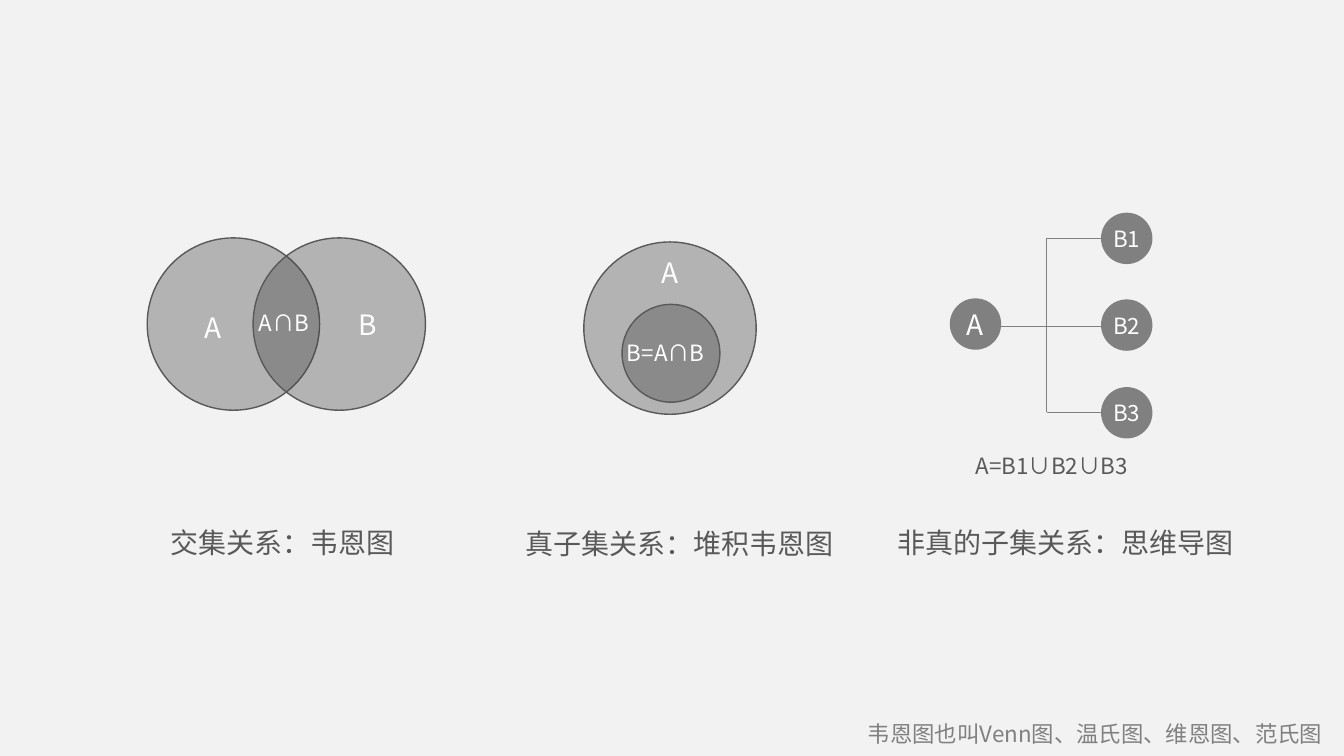
from dataclasses import dataclass

from lxml.etree import SubElement
from pptx import Presentation
from pptx.dml.color import RGBColor
from pptx.enum.shapes import MSO_CONNECTOR, MSO_SHAPE
from pptx.enum.text import MSO_ANCHOR, MSO_AUTO_SIZE, PP_ALIGN
from pptx.oxml.ns import qn
from pptx.shapes.autoshape import Shape
from pptx.slide import Slide
from pptx.text.text import TextFrame
from pptx.util import Emu, Pt

EMU_PER_PX = 9144
FONT = "Noto Sans CJK SC"
COLORS = {
    "background": "F2F2F2",
    "set": "404040",
    "outline": "595959",
    "node": "808080",
    "white": "FFFFFF",
}
SET_OPACITY = 35
NODE_SIZE = 51
BRANCH_LEFT = 1092
TRUNK_X = 1038
CAPTION_HEIGHT = 44
LABEL_HEIGHT = 37


@dataclass(frozen=True)
class VennCircle:
    left: int
    top: int
    diameter: int


@dataclass(frozen=True)
class Node:
    text: str
    left: int
    top: int
    size: int


@dataclass(frozen=True)
class Line:
    x1: int
    y1: int
    x2: int
    y2: int


@dataclass(frozen=True)
class Label:
    text: str
    left: int
    top: int
    width: int
    size: int
    color: str


VENN_CIRCLES = [
    VennCircle(146, 236, 171),
    VennCircle(251, 236, 171),
    VennCircle(579, 240, 171),
    VennCircle(617, 302, 97),
]
NODES = [
    Node("A", 942, 296, 20),
    Node("B1", BRANCH_LEFT, 211, 16),
    Node("B2", BRANCH_LEFT, 297, 16),
    Node("B3", BRANCH_LEFT, 384, 16),
]
LINES = [
    Line(TRUNK_X, 236, TRUNK_X, 409),
    Line(TRUNK_X, 236, BRANCH_LEFT, 236),
    Line(989, 324, BRANCH_LEFT, 324),
    Line(TRUNK_X, 409, BRANCH_LEFT, 409),
]
LABELS = [
    Label("交集关系：韦恩图", 159, 516, 245, 20, "outline"),
    Label("真子集关系：堆积韦恩图", 511, 517, 329, 20, "outline"),
    Label("非真的子集关系：思维导图", 880, 516, 357, 20, "outline"),
    Label("A", 193, 303, 39, 20, "white"),
    Label("B", 346, 300, 41, 20, "white"),
    Label("A∩B", 247, 302, 75, 16, "white"),
    Label("A", 646, 249, 39, 20, "white"),
    Label("B=A∩B", 612, 332, 105, 16, "white"),
    Label("A=B1∪B2∪B3", 958, 444, 185, 16, "outline"),
    Label("韦恩图也叫Venn图、温氏图、维恩图、范氏图", 851, 710, 481, 16, "node"),
]


def px(length: int) -> Emu:
    return Emu(length * EMU_PER_PX)


def rgb(name: str) -> RGBColor:
    return RGBColor.from_string(COLORS[name])


def write_text(frame: TextFrame, text: str, size: int, color: str) -> None:
    frame.word_wrap = False
    paragraph = frame.paragraphs[0]
    run = paragraph.add_run()
    run.text = text
    paragraph.font.size = Pt(size)
    paragraph.font.color.rgb = rgb(color)
    paragraph.font.name = FONT
    east_asian = SubElement(run._r.get_or_add_rPr(), qn("a:ea"))
    east_asian.set("typeface", FONT)


def add_circle(slide: Slide, left: int, top: int, diameter: int, fill: str) -> Shape:
    shape = slide.shapes.add_shape(
        MSO_SHAPE.OVAL, px(left), px(top), px(diameter), px(diameter)
    )
    shape.shadow.inherit = False
    shape.fill.solid()
    shape.fill.fore_color.rgb = rgb(fill)
    return shape


def add_venn_circle(slide: Slide, circle: VennCircle) -> None:
    shape = add_circle(slide, circle.left, circle.top, circle.diameter, "set")
    shape.line.color.rgb = rgb("outline")
    shape.line.width = Pt(1)
    fill_color = shape._element.spPr.find(qn("a:solidFill")).find(qn("a:srgbClr"))
    SubElement(fill_color, qn("a:alpha")).set("val", str(SET_OPACITY * 1000))


def add_node(slide: Slide, node: Node) -> None:
    shape = add_circle(slide, node.left, node.top, NODE_SIZE, "node")
    shape.line.fill.background()
    frame = shape.text_frame
    frame.margin_left = frame.margin_right = 0
    frame.margin_top = frame.margin_bottom = 0
    frame.vertical_anchor = MSO_ANCHOR.MIDDLE
    write_text(frame, node.text, node.size, "white")
    frame.paragraphs[0].alignment = PP_ALIGN.CENTER


def add_line(slide: Slide, line: Line) -> None:
    connector = slide.shapes.add_connector(
        MSO_CONNECTOR.STRAIGHT, px(line.x1), px(line.y1), px(line.x2), px(line.y2)
    )
    connector.line.color.rgb = rgb("node")
    connector.line.width = Pt(0.5)
    SubElement(connector._element.spPr, qn("a:effectLst"))


def add_label(slide: Slide, label: Label) -> None:
    height = CAPTION_HEIGHT if label.size == 20 else LABEL_HEIGHT
    box = slide.shapes.add_textbox(
        px(label.left), px(label.top), px(label.width), px(height)
    )
    write_text(box.text_frame, label.text, label.size, label.color)
    box.text_frame.auto_size = MSO_AUTO_SIZE.SHAPE_TO_FIT_TEXT


def main() -> None:
    presentation = Presentation()
    presentation.slide_width = px(1333)
    presentation.slide_height = px(750)
    slide = presentation.slides.add_slide(presentation.slide_layouts[6])
    slide.background.fill.solid()
    slide.background.fill.fore_color.rgb = rgb("background")
    for circle in VENN_CIRCLES:
        add_venn_circle(slide, circle)
    for node in NODES:
        add_node(slide, node)
    for line in LINES:
        add_line(slide, line)
    for label in LABELS:
        add_label(slide, label)
    presentation.save("out.pptx")


if __name__ == "__main__":
    main()
